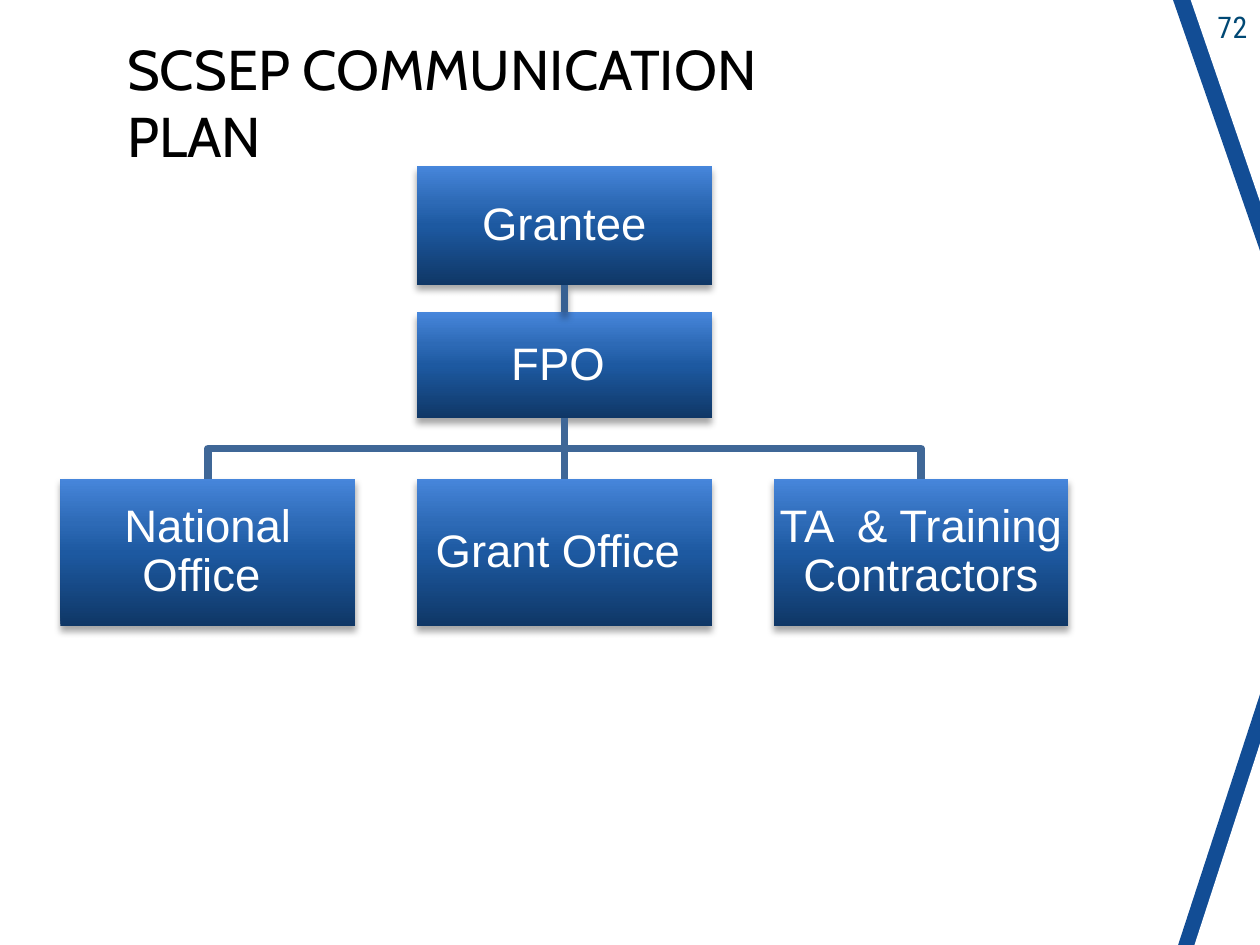
from lxml import etree
from pptx import Presentation
from pptx import util as u
from pptx.dml.color import RGBColor
from pptx.enum import shapes, text
from pptx.oxml import parse_xml
from pptx.oxml.ns import nsdecls, qn

COLORS = {
    "blue": "124D95",
    "white": "FFFFFF",
    "black": "000000",
    "number": "004874",
    "branch": "3F6797",
    "link": "376092",
}
BOX_GRADIENT = {0: "0F3766", 50: "1D59A1", 70: "2D6AB6", 100: "4786DB"}
LINE_WIDTH = 4.33
BOX_WIDTH = 2.34
COLUMN_STEP = 2.83
LEFT_COLUMN = 0.48
OFFICE_TOP = 3.8
BRANCH_Y = 3.56


def rgb(name):
    return RGBColor.from_string(COLORS[name])


def write(frame, words, *, size, font, color, align=text.PP_ALIGN.LEFT,
          anchor=text.MSO_ANCHOR.TOP, inset=None, line_spacing=None, tracking=None):
    frame.word_wrap = True
    frame.auto_size = text.MSO_AUTO_SIZE.NONE
    frame.vertical_anchor = anchor
    if inset is not None:
        frame.margin_left = frame.margin_right = u.Inches(inset)
        frame.margin_top = frame.margin_bottom = u.Inches(inset)
    paragraph = frame.paragraphs[0]
    paragraph.alignment = align
    if line_spacing:
        paragraph.line_spacing = line_spacing
    run = paragraph.add_run()
    run.text = words
    run.font.size = u.Pt(size)
    run.font.name = font
    run.font.color.rgb = rgb(color)
    if tracking:
        run._r.get_or_add_rPr().set("spc", str(int(tracking * 100)))


def drop_shadow(element):
    effects = element.spPr.find(qn("a:effectLst"))
    if effects is None:
        effects = etree.SubElement(element.spPr, qn("a:effectLst"))
    effects.append(parse_xml(
        f'<a:outerShdw {nsdecls("a")} blurRad="{u.Pt(4)}" dist="{u.Pt(3)}" '
        'dir="5400000" rotWithShape="0"><a:srgbClr val="000000">'
        '<a:alpha val="35000"/></a:srgbClr></a:outerShdw>'))


class ChartSlide:
    def __init__(self, slide):
        self.slide = slide
        self.shapes = slide.shapes

    def title(self, words, left, top, width, height):
        heading = self.shapes.title
        heading.left, heading.top = u.Inches(left), u.Inches(top)
        heading.width, heading.height = u.Inches(width), u.Inches(height)
        write(heading.text_frame, words, size=32, font="Cabin", color="black")

    def page_number(self, words, left, top, width, height):
        number = self.shapes.add_textbox(*map(u.Inches, (left, top, width, height)))
        write(number.text_frame, words, size=17, font="Roboto Condensed",
              color="number", align=text.PP_ALIGN.RIGHT, tracking=0.4)

    def corner(self, color, left, top, width, height, upper):
        wedge = self.shapes.add_shape(
            shapes.MSO_SHAPE.ISOSCELES_TRIANGLE,
            *map(u.Inches, (left, top, width, height)))
        wedge.adjustments[0] = 0 if upper else 1
        wedge.rotation = 180 if upper else 0
        wedge.shadow.inherit = False
        wedge.fill.solid()
        wedge.fill.fore_color.rgb = rgb(color)
        wedge.line.fill.background()

    def box(self, words, left, top, height):
        box = self.shapes.add_shape(
            shapes.MSO_SHAPE.RECTANGLE,
            *map(u.Inches, (left, top, BOX_WIDTH, height)))
        box.shadow.inherit = False
        box.fill.gradient()
        box.fill.gradient_angle = 90
        stops = box._element.spPr.find(qn("a:gradFill")).find(qn("a:gsLst"))
        for stop in list(stops):
            stops.remove(stop)
        for position, color in BOX_GRADIENT.items():
            stops.append(parse_xml(
                f'<a:gs {nsdecls("a")} pos="{position * 1000}">'
                f'<a:srgbClr val="{color}"/></a:gs>'))
        box.fill.gradient_angle = 90
        box.line.fill.background()
        drop_shadow(box._element)
        write(box.text_frame, words, size=26, font="Arial", color="white",
              align=text.PP_ALIGN.CENTER, anchor=text.MSO_ANCHOR.MIDDLE,
              inset=0.02, line_spacing=0.9)
        return box

    def link(self, upper, lower, color, shadow=False):
        link = self.shapes.add_connector(shapes.MSO_CONNECTOR.STRAIGHT, 0, 0, 0, 0)
        link.begin_connect(upper, 2)
        link.end_connect(lower, 0)
        link.line.color.rgb = rgb(color)
        link.line.width = u.Pt(LINE_WIDTH)
        etree.SubElement(link._element.spPr, qn("a:effectLst"))
        if shadow:
            drop_shadow(link._element)

    def branch(self, upper, lower):
        start_x, start_y = upper.left + upper.width // 2, upper.top + upper.height
        end_x = lower.left + lower.width // 2
        bend_y = u.Inches(BRANCH_Y)
        builder = self.shapes.build_freeform(start_x, start_y)
        builder.add_line_segments(
            [(start_x, bend_y), (end_x, bend_y), (end_x, lower.top)], close=False)
        branch = builder.convert_to_shape()
        branch.shadow.inherit = False
        branch.fill.background()
        branch.line.color.rgb = rgb("branch")
        branch.line.width = u.Pt(LINE_WIDTH)


def main():
    deck = Presentation()
    deck.slide_width, deck.slide_height = u.Inches(10), u.Inches(7.5)
    page = ChartSlide(deck.slides.add_slide(deck.slide_layouts[5]))

    page.corner("blue", 9.31, 0, 0.69, 1.99, upper=True)
    page.corner("white", 9.45, 0, 0.55, 1.6, upper=True)
    page.corner("blue", 9.35, 5.51, 0.65, 1.99, upper=False)
    page.corner("white", 9.48, 5.9, 0.52, 1.6, upper=False)
    page.page_number("72", 9.2, 0.02, 0.8, 0.39)
    page.title("SCSEP COMMUNICATION PLAN", 0.91, 0.22, 6.24, 0.64)

    middle = LEFT_COLUMN + COLUMN_STEP
    grantee = page.box("Grantee", middle, 1.32, 0.94)
    fpo = page.box("FPO ", middle, 2.48, 0.84)
    national, grant, training = [
        page.box(words, LEFT_COLUMN + column * COLUMN_STEP, OFFICE_TOP, 1.17)
        for column, words in enumerate(
            ["National Office ", "Grant Office ", "TA  & Training Contractors"])
    ]

    page.branch(fpo, national)
    page.branch(fpo, training)
    page.link(fpo, grant, "branch")
    page.link(grantee, fpo, "link", shadow=True)

    deck.save("out.pptx")


if __name__ == "__main__":
    main()
